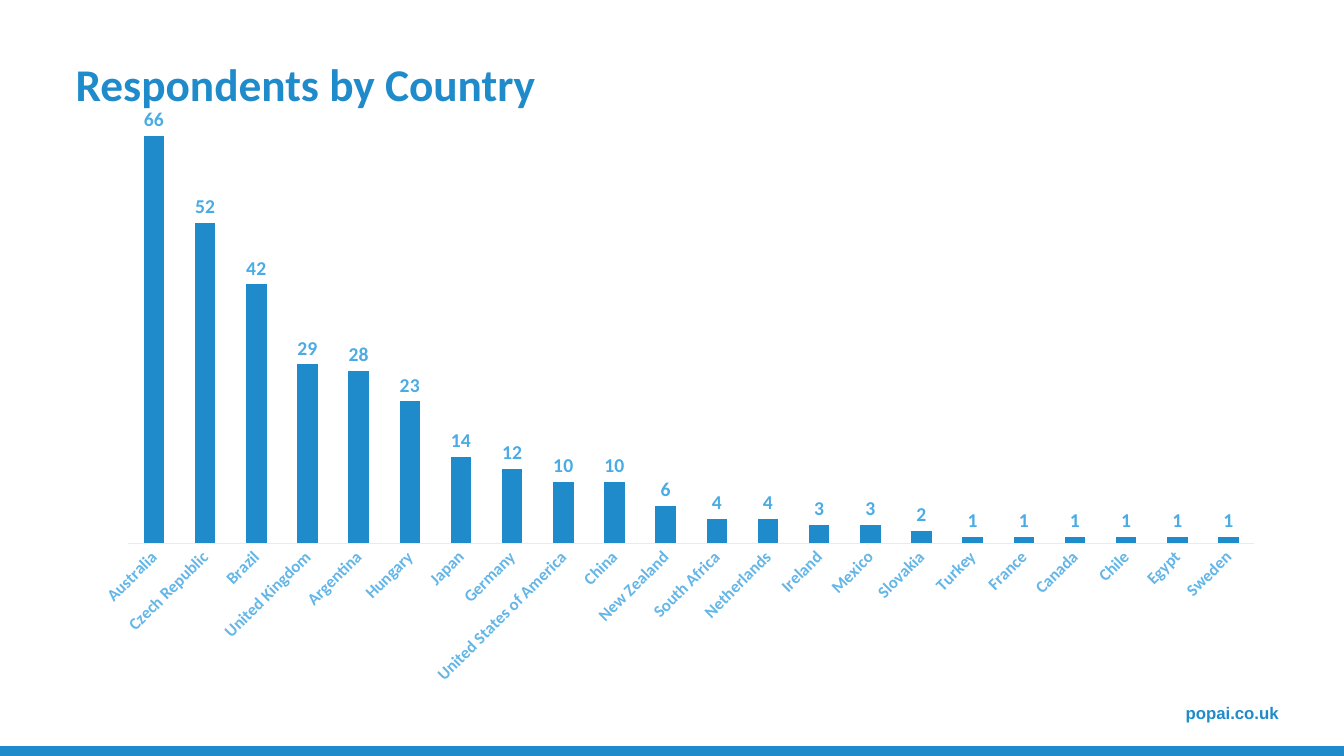
import dataclasses

import lxml.etree
import pptx
import pptx.chart.data
import pptx.dml.color
import pptx.enum.chart
import pptx.enum.shapes
import pptx.enum.text
import pptx.oxml.ns
import pptx.util

Cm = pptx.util.Cm
Pt = pptx.util.Pt
qn = pptx.oxml.ns.qn

BLUE = "1F8BCB"
VALUE_BLUE = "4BABE4"
COUNTRY_BLUE = "63B6E7"
AXIS_BLUE = "DBEEFA"


@dataclasses.dataclass(frozen=True)
class Country:
    name: str
    respondents: int


COUNTRIES = [
    Country("Australia", 66),
    Country("Czech Republic", 52),
    Country("Brazil", 42),
    Country("United Kingdom", 29),
    Country("Argentina", 28),
    Country("Hungary", 23),
    Country("Japan", 14),
    Country("Germany", 12),
    Country("United States of America", 10),
    Country("China", 10),
    Country("New Zealand", 6),
    Country("South Africa", 4),
    Country("Netherlands", 4),
    Country("Ireland", 3),
    Country("Mexico", 3),
    Country("Slovakia", 2),
    Country("Turkey", 1),
    Country("France", 1),
    Country("Canada", 1),
    Country("Chile", 1),
    Country("Egypt", 1),
    Country("Sweden", 1),
]


def colour(value: str) -> pptx.dml.color.RGBColor:
    return pptx.dml.color.RGBColor.from_string(value)


def style_font(font, size: float, hex_colour: str, name: str = "Calibri", bold: bool = True) -> None:
    font.size = Pt(size)
    font.name = name
    font.bold = bold
    font.color.rgb = colour(hex_colour)


def add_footer(slide) -> None:
    stripe = slide.shapes.add_shape(
        pptx.enum.shapes.MSO_SHAPE.RECTANGLE, 0, Cm(18.8), Cm(33.87), Cm(0.25))
    stripe.shadow.inherit = False
    stripe.fill.solid()
    stripe.fill.fore_color.rgb = colour(BLUE)
    stripe.line.fill.background()

    website = slide.shapes.add_textbox(Cm(25.83), Cm(17.58), Cm(6.65), Cm(0.77))
    website.text_frame.word_wrap = True
    website.text_frame.text = "popai.co.uk"
    paragraph = website.text_frame.paragraphs[0]
    paragraph.alignment = pptx.enum.text.PP_ALIGN.RIGHT
    style_font(paragraph.runs[0].font, 12, BLUE, "Arial")


def set_title(slide, text: str) -> None:
    title = slide.shapes.title
    title.left, title.top, title.width, title.height = Cm(1.65), Cm(1.37), Cm(30.48), Cm(1.47)
    frame = title.text_frame
    frame.text = text
    frame.auto_size = pptx.enum.text.MSO_AUTO_SIZE.NONE
    frame.vertical_anchor = pptx.enum.text.MSO_ANCHOR.MIDDLE
    frame.paragraphs[0].alignment = pptx.enum.text.PP_ALIGN.LEFT
    style_font(frame.paragraphs[0].runs[0].font, 32.4, BLUE)


def set_plot_layout(chart, **fractions: float) -> None:
    plot_area = chart.plots[0]._element.getparent()
    for old_layout in plot_area.findall(qn("c:layout")):
        plot_area.remove(old_layout)
    layout = lxml.etree.Element(qn("c:layout"))
    manual = lxml.etree.SubElement(layout, qn("c:manualLayout"))
    settings = {"layoutTarget": "inner", "xMode": "edge", "yMode": "edge", **fractions}
    for tag, value in settings.items():
        lxml.etree.SubElement(manual, qn(f"c:{tag}")).set("val", str(value))
    plot_area.insert(0, layout)


def add_respondents_chart(slide, countries: list[Country]) -> None:
    data = pptx.chart.data.CategoryChartData()
    data.categories = [country.name for country in countries]
    data.add_series("Series 1", [country.respondents for country in countries])
    chart = slide.shapes.add_chart(
        pptx.enum.chart.XL_CHART_TYPE.COLUMN_CLUSTERED,
        Cm(2.03), Cm(2.51), Cm(30.18), Cm(15.11), data).chart
    chart.has_title = False
    chart.has_legend = False
    style_font(chart.font, 10, BLUE, bold=False)
    set_plot_layout(chart, x=0.04, y=0.02, w=0.94, h=0.72)

    columns = chart.plots[0]
    columns.gap_width = 150
    columns.overlap = -25
    columns.vary_by_categories = False
    respondents = columns.series[0]
    respondents.format.fill.solid()
    respondents.format.fill.fore_color.rgb = colour(BLUE)
    counts = respondents.data_labels
    counts.show_value = True
    counts.position = pptx.enum.chart.XL_LABEL_POSITION.OUTSIDE_END
    style_font(counts.font, 14, VALUE_BLUE)

    country_axis = chart.category_axis
    country_axis.major_tick_mark = pptx.enum.chart.XL_TICK_MARK.NONE
    country_axis.format.line.color.rgb = colour(AXIS_BLUE)
    country_axis.format.line.width = Pt(0.75)
    style_font(country_axis.tick_labels.font, 12, COUNTRY_BLUE)
    country_axis._element.find(qn("c:txPr")).find(qn("a:bodyPr")).set("rot", "-2700000")

    count_axis = chart.value_axis
    count_axis.minimum_scale = 0
    count_axis.maximum_scale = 70
    count_axis.has_major_gridlines = False
    count_axis.visible = False


def main() -> None:
    presentation = pptx.Presentation()
    presentation.slide_width = Cm(33.87)
    presentation.slide_height = Cm(19.05)
    slide = presentation.slides.add_slide(presentation.slide_layouts[5])
    add_footer(slide)
    set_title(slide, "Respondents by Country")
    add_respondents_chart(slide, COUNTRIES)
    presentation.save("out.pptx")


if __name__ == "__main__":
    main()
